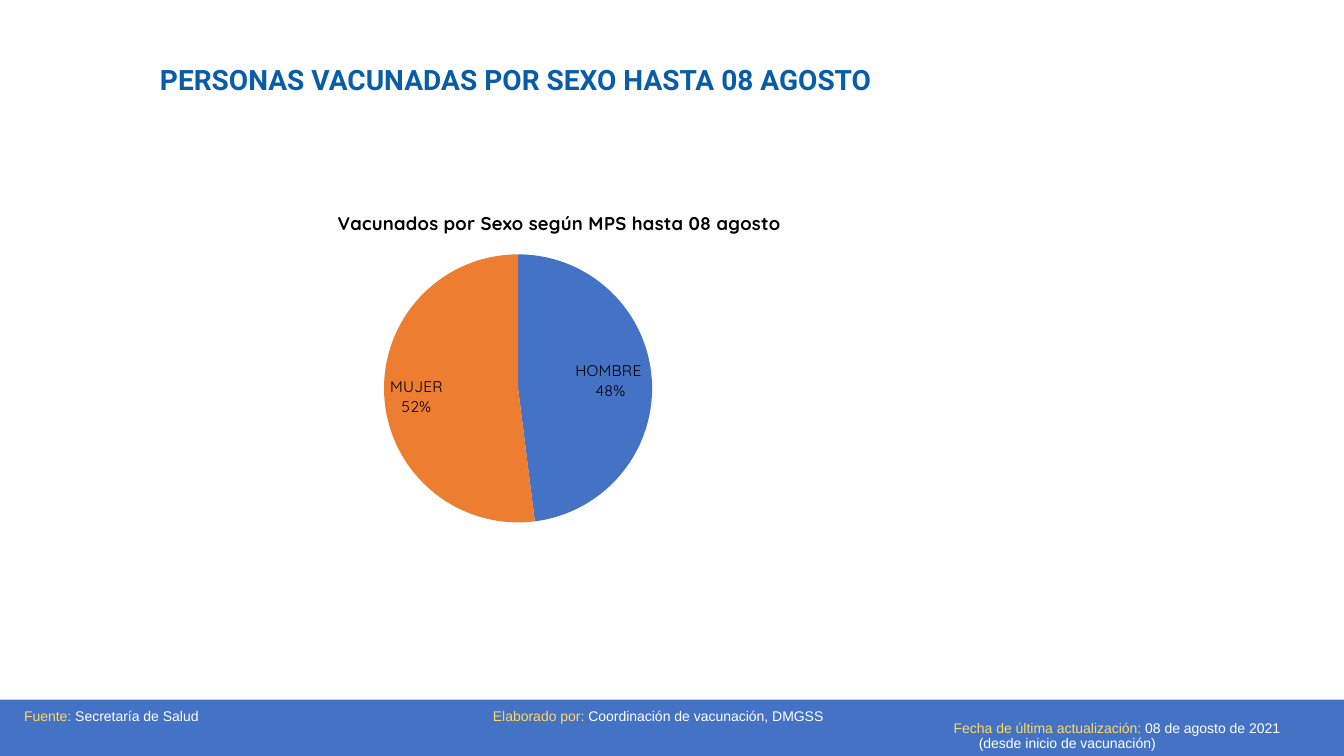
from lxml import etree
from pptx import Presentation
from pptx.chart.data import CategoryChartData as ChartData
from pptx.dml.color import RGBColor as Rgb
from pptx.enum.chart import XL_CHART_TYPE as ChartType, XL_LABEL_POSITION as LabelPosition
from pptx.enum.shapes import MSO_SHAPE as Shape
from pptx.enum.text import MSO_ANCHOR as Anchor, PP_ALIGN as Align
from pptx.oxml import parse_xml
from pptx.oxml.ns import nsdecls, qn
from pptx.util import Inches, Pt

COLORS = {
    "blue": "4472C4",
    "orange": "ED7D31",
    "title": "095DA6",
    "label": "FFD966",
    "white": "FFFFFF",
    "black": "000000",
}


class SlideBuilder:
    """Holds the style and the current slide, and adds elements to it."""

    def __init__(self, slide, colors):
        self.slide = slide
        self.colors = colors

    def color(self, name):
        return Rgb.from_string(self.colors[name])

    def style(self, font, name, size, color, bold=False):
        font.name, font.size, font.bold = name, Pt(size), bold
        font.color.rgb = self.color(color)

    def bar(self, left, top, width, height, color):
        bar = self.slide.shapes.add_shape(Shape.RECTANGLE, *map(Inches, (left, top, width, height)))
        bar.shadow.inherit = False
        bar.fill.solid()
        bar.fill.fore_color.rgb = self.color(color)
        bar.line.fill.background()

    def text(self, left, top, width, height, spans, font, size, bold=False,
             align=Align.LEFT, anchor=Anchor.TOP, bottom=0.05):
        box = self.slide.shapes.add_textbox(*map(Inches, (left, top, width, height)))
        frame = box.text_frame
        frame.word_wrap = True
        frame.vertical_anchor = anchor
        frame.margin_bottom = Inches(bottom)
        para = frame.paragraphs[0]
        para.alignment = align
        para.line_spacing = 0.9
        properties = para._p.get_or_add_pPr()
        properties.set("marL", str(Inches(0.25)))
        properties.set("indent", str(Inches(-0.25)))
        for words, color in spans:
            span = para.add_run()
            span.text = words
            self.style(span.font, font, size, color, bold)

    def place(self, parent, **fractions):
        for old in parent.findall(qn("c:layout")):
            parent.remove(old)
        layout = parse_xml(f"<c:layout {nsdecls('c')}><c:manualLayout/></c:layout>")
        for tag, value in fractions.items():
            etree.SubElement(layout[0], qn(f"c:{tag}")).set("val", str(value))
        return layout

    def pie(self, left, top, width, height, title, slices, font):
        data = ChartData()
        data.categories = [name for name, _, _ in slices]
        data.add_series("Series 1", [value for _, value, _ in slices])
        chart = self.slide.shapes.add_chart(
            ChartType.PIE, *map(Inches, (left, top, width, height)), data).chart
        self.style(chart.font, font, 11, "black")
        chart.has_legend = False
        chart.has_title = True
        span = chart.chart_title.text_frame.paragraphs[0].add_run()
        span.text = title
        self.style(span.font, font, 13.2, "black", True)
        chart.chart_title.include_in_layout = False

        plot = chart.plots[0]
        plot.vary_by_categories = True
        for index, (_, _, color) in enumerate(slices):
            fill = plot.series[0].points[index].format.fill
            fill.solid()
            fill.fore_color.rgb = self.color(color)
        plot.has_data_labels = True
        labels = plot.data_labels
        labels.show_value = False
        labels.show_percentage = True
        labels.show_category_name = True
        labels.position = LabelPosition.INSIDE_END
        self.style(labels.font, font, 11, "black")
        separator = etree.Element(qn("c:separator"))
        separator.text = "\n"
        labels._element.find(qn("c:showBubbleSize")).addnext(separator)

        area = chart._chartSpace.chart.plotArea
        area.insert(0, self.place(area, layoutTarget="inner", xMode="edge", yMode="edge",
                                  x=0.19, y=0.18, w=0.49, h=0.78))
        heading = chart.chart_title._element
        heading.find(qn("c:tx")).addnext(
            self.place(heading, xMode="edge", yMode="edge", x=0.12, y=0.04))


def main():
    deck = Presentation()
    deck.slide_width, deck.slide_height = Inches(13.33), Inches(7.5)
    page = SlideBuilder(deck.slides.add_slide(deck.slide_layouts[6]), COLORS)

    page.bar(0, 6.94, 13.33, 0.56, "blue")
    page.text(0.92, 0.61, 8.46, 0.57,
              [("PERSONAS VACUNADAS POR SEXO HASTA 08 AGOSTO ", "title")],
              "Roboto", 20, bold=True, align=Align.CENTER)

    footers = [
        (0.14, 7, 4.32, "Fuente: ", "Secretaría de Salud"),
        (9.36, 7.19, 3.89, "Fecha de última actualización: ",
         "08 de agosto de 2021 (desde inicio de vacunación)"),
        (4.79, 7, 4.32, "Elaborado por: ", "Coordinación de vacunación, DMGSS"),
    ]
    for left, top, width, label, detail in footers:
        page.text(left, top, width, 0.4, [(label, "label"), (detail, "white")],
                  "Arial", 10, anchor=Anchor.MIDDLE, bottom=0.22)

    page.pie(2.62, 1.91, 5.79, 3.41, "Vacunados por Sexo según MPS hasta 08 agosto",
             [("HOMBRE ", 48, "blue"), ("MUJER", 52, "orange")], "Quicksand")
    deck.save("out.pptx")


if __name__ == "__main__":
    main()
